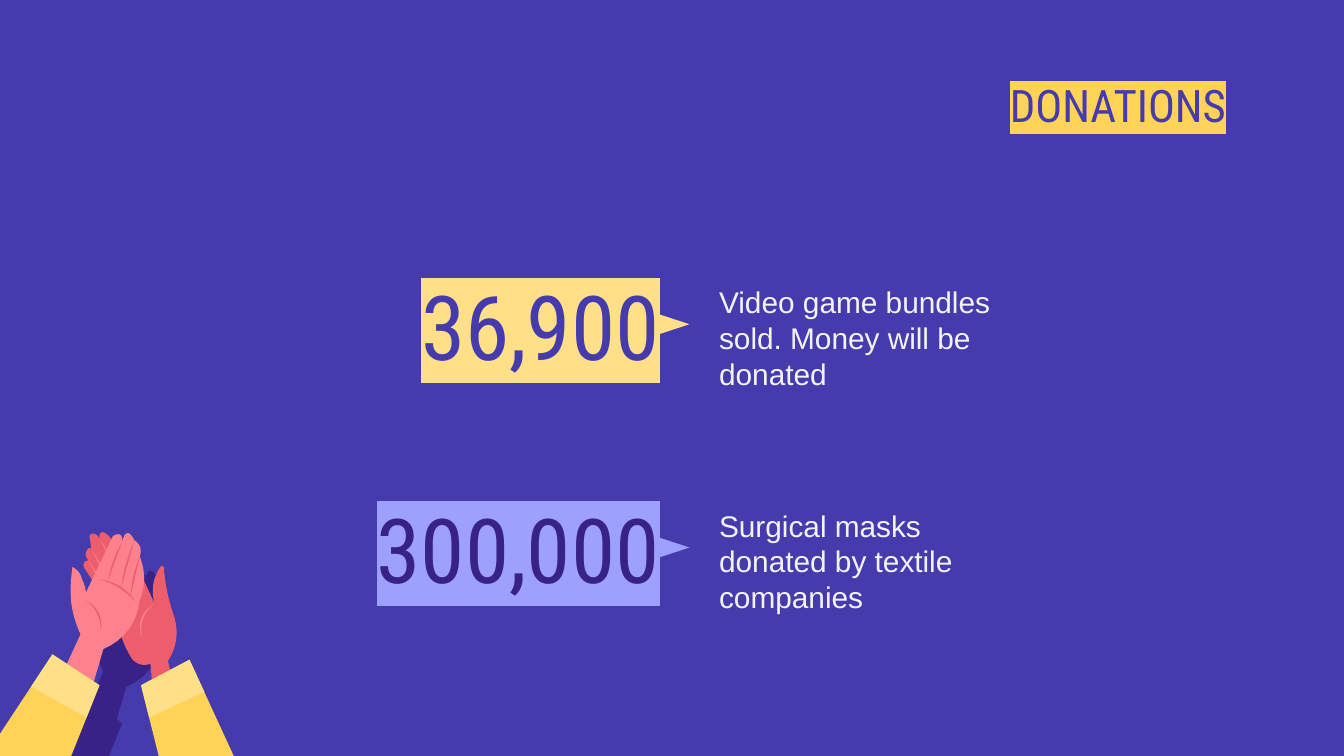
from math import dist

from lxml.etree import SubElement
from pptx import Presentation
from pptx.dml.color import RGBColor
from pptx.enum.shapes import MSO_SHAPE
from pptx.enum.text import MSO_ANCHOR, MSO_AUTO_SIZE, PP_ALIGN
from pptx.oxml.ns import qn
from pptx.util import Cm, Pt

INDIGO, NAVY, LILAC = "453BAD", "382285", "9DA1FD"
YELLOW, PALE_YELLOW, WHITE = "FFD357", "FFE088", "F3F3F3"
PINK, RED = "FE828D", "EC5E6B"

# The hands are measured in art units, from the top left of the slide.
ART_UNIT = Cm(0.0254)
FLOOR = 563
CUFF_DEPTH = 24
CREASE_WIDTH = 1.2
SHADOW_SHIFT = (17, 28)
ARC_STEPS = 8

# Each hand runs clockwise as (x, y, bulge); bulge shapes the arc that ends there.
FINGERTIPS = [(84, 399, 0), (91, 403, 0.45), (100, 402, 0.65), (104, 414, 0.2)]
PALM_EDGE = [(104, 447, 0.1), (77, 483, 0.14)]
WRIST = [(67, 517, 0), (48, 498, 0), (60, 472, 0)]
THUMB = [(53, 448, 0.04), (54, 422, 0.03), (61, 431, 0.12), (64, 441, 0.05)]
FRONT_HAND = FINGERTIPS + PALM_EDGE + WRIST + THUMB

BACK_FINGERTIPS = [(63, 423, 0), (66, 417, 0.35), (66, 408, 0.25), (68, 409, 0.2),
                   (67, 401, 0), (69, 397, 0.3), (74, 401, 0.15), (80, 398, 0.55)]
BACK_THUMB = [(103, 423, 0), (115, 449, 0), (120, 421, 0.12), (122, 424, 0.3)]
BACK_PALM_EDGE = [(130, 460, -0.03), (125, 492, 0.11)]
BACK_WRIST = [(138, 540, 0), (116, 540, 0), (112, 494, 0)]
BACK_HEEL = [(98, 490, 0.17), (87, 460, 0.05)]
BACK_HAND = BACK_FINGERTIPS + BACK_THUMB + BACK_PALM_EDGE + BACK_WRIST + BACK_HEEL

# A crease is (start, end, bulge).
FINGER_GAPS = [((91, 403), (80, 433), 0), ((100, 402), (90, 438), 0),
               ((104, 414), (97, 444), 0)]
PALM_CREASE = ((74, 431), (101, 448), 0.11)
THUMB_CREASE = ((64, 447), (75, 470), 0.18)
BACK_FINGER_GAPS = [((74, 401), (100, 440), 0), ((68, 409), (93, 447), 0),
                    ((66, 417), (89, 454), 0)]
BACK_THUMB_CREASE = ((115, 449), (106, 476), -0.16)

# A sleeve is its two opening corners, each (x, y, sideways drift per unit down).
LEFT_SLEEVE = [(39, 487, -0.66), (74, 510, -0.4)]
RIGHT_SLEEVE = [(105, 510, 0.25), (141, 491, 0.46)]


def rgb(hex_code):
    return RGBColor.from_string(hex_code)


def arc(start, end, bulge):
    """Points after start up to end, bowed left of travel by bulge x chord."""
    (x0, y0), (x1, y1) = start, end
    bend_x = (x0 + x1) / 2 + 2 * bulge * (y1 - y0)
    bend_y = (y0 + y1) / 2 - 2 * bulge * (x1 - x0)
    steps = [step / ARC_STEPS for step in range(1, ARC_STEPS + 1)] if bulge else [1]
    return [((1 - t)**2 * x0 + 2 * t * (1 - t) * bend_x + t * t * x1,
             (1 - t)**2 * y0 + 2 * t * (1 - t) * bend_y + t * t * y1)
            for t in steps]


def shifted(landmarks, shift):
    """Move landmarks, keeping their third value."""
    return [(x + shift[0], y + shift[1], value) for x, y, value in landmarks]


class SlideBuilder:
    heading_font = "Roboto Condensed"
    body_font = "Arial"
    inset = Cm(0.25)

    def __init__(self, slide, background):
        self.slide = slide
        slide.background.fill.solid()
        slide.background.fill.fore_color.rgb = rgb(background)

    def text(self, index, wording, box, size, color, font, align, anchor,
             top_inset=inset):
        """Fill a placeholder with one plain paragraph and return its run."""
        holder = self.slide.placeholders[index]
        holder.left, holder.top, holder.width, holder.height = map(Cm, box)
        frame = holder.text_frame
        frame.word_wrap = True
        frame.auto_size = MSO_AUTO_SIZE.NONE
        frame.vertical_anchor = anchor
        frame.margin_left = frame.margin_right = frame.margin_bottom = self.inset
        frame.margin_top = top_inset
        paragraph = frame.paragraphs[0]
        paragraph.alignment = align
        paragraph.space_before = Pt(0)
        properties = paragraph._p.get_or_add_pPr()
        properties.set("marL", "0")
        properties.set("indent", "0")
        SubElement(properties, qn("a:buNone"))
        run = paragraph.add_run()
        run.text = wording
        run.font.name, run.font.size, run.font.bold = font, Pt(size), False
        run.font.color.rgb = rgb(color)
        return run

    def heading(self, index, wording, box, size, color, highlight,
                anchor=MSO_ANCHOR.MIDDLE):
        run = self.text(index, wording, box, size, color, self.heading_font,
                        PP_ALIGN.RIGHT, anchor)
        marker = SubElement(run._r.rPr, qn("a:highlight"))
        SubElement(marker, qn("a:srgbClr"), val=highlight)
        run._r.rPr.find(qn("a:solidFill")).addnext(marker)

    def description(self, index, wording, box):
        self.text(index, wording, box, 16, WHITE, self.body_font,
                  PP_ALIGN.LEFT, MSO_ANCHOR.MIDDLE, Cm(0.74))

    def paint(self, shape, color):
        shape.shadow.inherit = False
        shape.fill.solid()
        shape.fill.fore_color.rgb = rgb(color)
        shape.line.fill.background()

    def pointer(self, left, top, color):
        triangle = self.slide.shapes.add_shape(
            MSO_SHAPE.ISOSCELES_TRIANGLE, Cm(left), Cm(top), Cm(0.38), Cm(0.58))
        triangle.rotation = 90
        self.paint(triangle, color)

    def outline(self, points, color):
        start, *rest = [(x * ART_UNIT, y * ART_UNIT) for x, y in points]
        builder = self.slide.shapes.build_freeform(*start)
        builder.add_line_segments(rest, close=True)
        self.paint(builder.convert_to_shape(), color)

    def hand(self, landmarks, color):
        points = []
        for before, (x, y, bulge) in zip(landmarks[-1:] + landmarks, landmarks):
            points += arc(before[:2], (x, y), bulge)
        self.outline(points, color)

    def crease(self, start, end, bulge, color):
        """Draw a thin sliver between two arcs that share their ends."""
        inner_bulge = bulge - CREASE_WIDTH / dist(start, end)
        there, back = arc(start, end, bulge), arc(end, start, -inner_bulge)
        self.outline([start] + there + back, color)

    def sleeve(self, opening, color, depth=None):
        """Draw cloth from the opening down to a depth, or else to the floor."""
        hem = []
        for x, y, drift in opening:
            drop = depth or FLOOR - y
            hem.append((x + drift * drop, y + drop))
        self.outline([corner[:2] for corner in opening] + hem[::-1], color)

    def arm(self, hand, creases, sleeve, skin, crease_color):
        self.hand(hand, skin)
        for start, end, bulge in creases:
            self.crease(start, end, bulge, crease_color)
        self.sleeve(sleeve, YELLOW)
        self.sleeve(sleeve, PALE_YELLOW, CUFF_DEPTH)

    def clapping_hands(self):
        self.hand(shifted(FRONT_HAND, SHADOW_SHIFT), NAVY)
        self.sleeve(shifted(LEFT_SLEEVE, SHADOW_SHIFT), NAVY)
        self.arm(BACK_HAND, BACK_FINGER_GAPS + [BACK_THUMB_CREASE], RIGHT_SLEEVE,
                 RED, PINK)
        self.arm(FRONT_HAND, FINGER_GAPS + [PALM_CREASE, THUMB_CREASE], LEFT_SLEEVE,
                 PINK, RED)


def main():
    deck = Presentation()
    deck.slide_width, deck.slide_height = Cm(25.4), Cm(14.29)
    comparison = deck.slide_layouts.get_by_name("Comparison")
    page = SlideBuilder(deck.slides.add_slide(comparison), INDIGO)

    page.heading(0, "DONATIONS", (3.23, 1.22, 20.19, 1.52), 24, INDIGO, YELLOW,
                 MSO_ANCHOR.TOP)
    donations = [
        ("36,900", "Video game bundles sold. Money will be donated",
         INDIGO, PALE_YELLOW),
        ("300,000", "Surgical masks donated by textile companies",
         NAVY, LILAC),
    ]
    for row, (amount, meaning, color, highlight) in enumerate(donations):
        top = 5.05 + 4.22 * row
        page.heading(1 + 2 * row, amount, (5.05, top, 7.67, 2.18), 48, color, highlight)
        page.description(2 + 2 * row, meaning, (13.34, top, 5.69, 2.18))
        page.pointer(12.55, top + 0.79, highlight)

    page.clapping_hands()
    deck.save("out.pptx")


if __name__ == "__main__":
    main()
